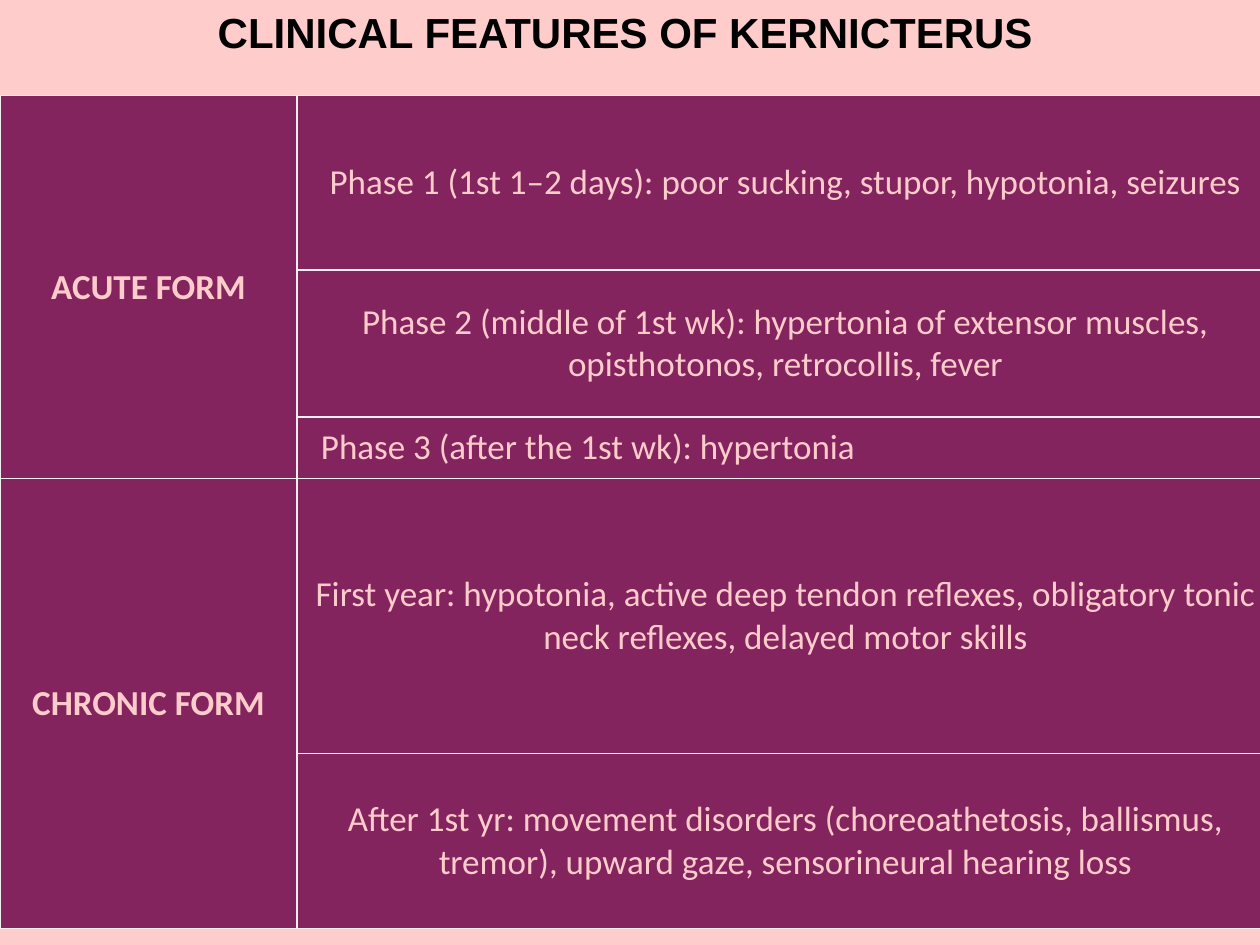
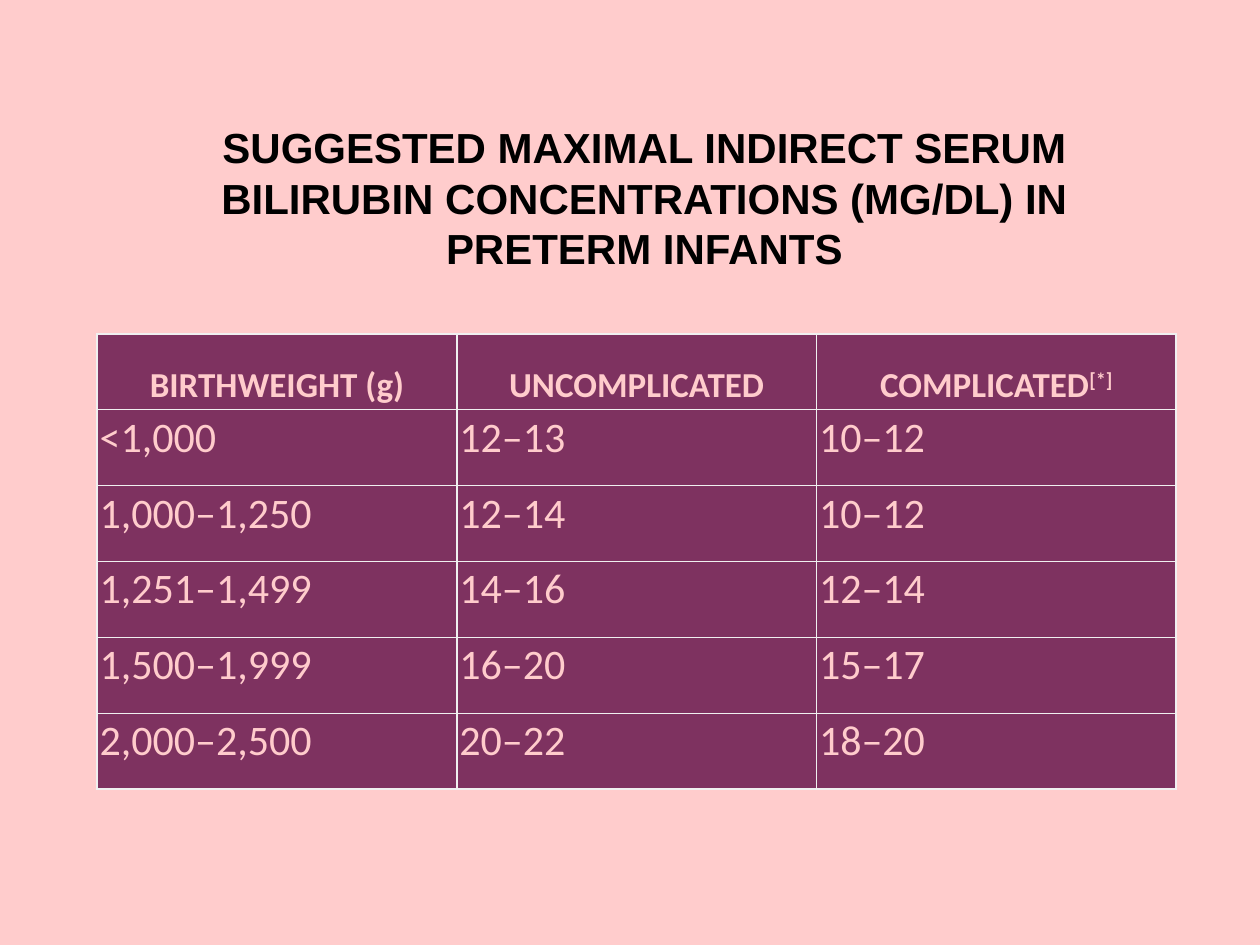
from dataclasses import dataclass

from lxml.etree import SubElement
from pptx import Presentation
from pptx.dml.color import RGBColor
from pptx.enum.text import MSO_ANCHOR as Anchor, MSO_AUTO_SIZE as AutoSize, PP_ALIGN as Align
from pptx.oxml import parse_xml
from pptx.oxml.ns import nsdecls, qn
from pptx.util import Cm, Pt

COLORS = {
    "background": "FFCCCC",
    "title": "000000",
    "cell_text": "FFCCCC",
    "border": "F0F0F0",
    "features": "84245E",
    "limits": "7E3260",
}
TITLE_FONT = {"name": "Arial", "size": Pt(24), "bold": True}
LABEL_FONT = {"name": "Calibri", "size": Pt(20), "bold": True}
PHASE_FONT = {"name": "Calibri", "size": Pt(20), "bold": False}
VALUE_FONT = {"name": "Calibri", "size": Pt(24), "bold": False}
SIDES = ("left", "right", "top", "bottom")


@dataclass(frozen=True)
class Box:
    """Position and size in centimetres."""
    left: float
    top: float
    width: float
    height: float

    def lengths(self) -> tuple:
        return Cm(self.left), Cm(self.top), Cm(self.width), Cm(self.height)


@dataclass(frozen=True)
class CellText:
    text: str
    font: dict
    align: Align = Align.CENTER
    anchor: Anchor = Anchor.MIDDLE
    margins: tuple = (0.03, 0.03, 0.03, 0.03)  # left, right, top, bottom
    superscript: str = ""


def color(name: str) -> RGBColor:
    return RGBColor.from_string(COLORS[name])


def apply_font(font, values: dict, color_name: str) -> None:
    for name, value in values.items():
        setattr(font, name, value)
    font.color.rgb = color(color_name)


def add_titled_slide(presentation, title: str, box: Box, wrap: bool):
    slide = presentation.slides.add_slide(presentation.slide_layouts[5])
    shape = slide.shapes.title
    shape.left, shape.top, shape.width, shape.height = box.lengths()
    frame = shape.text_frame
    frame.text = title
    frame.word_wrap = wrap
    frame.auto_size = AutoSize.NONE
    frame.vertical_anchor = Anchor.MIDDLE
    paragraph = frame.paragraphs[0]
    paragraph.alignment = Align.CENTER
    apply_font(paragraph.runs[0].font, TITLE_FONT, "title")
    return slide


def add_borders(cell) -> None:
    properties = cell._tc.get_or_add_tcPr()
    for index, side in enumerate("LRTB"):
        line = parse_xml(f'<a:ln{side} {nsdecls("a")} w="{Pt(1)}"/>')
        fill = SubElement(line, qn("a:solidFill"))
        SubElement(fill, qn("a:srgbClr"), val=COLORS["border"])
        properties.insert(index, line)


def add_grid(slide, left: float, top: float, columns: list, rows: list, fill: str):
    """Add a table whose cells all share one fill and border."""
    box = Box(left, top, sum(columns), sum(rows))
    table = slide.shapes.add_table(len(rows), len(columns), *box.lengths()).table
    table.first_row = table.horz_banding = False
    for column, width in zip(table.columns, columns):
        column.width = Cm(width)
    for row, height in zip(table.rows, rows):
        row.height = Cm(height)
    for cell in table.iter_cells():
        cell.fill.solid()
        cell.fill.fore_color.rgb = color(fill)
        add_borders(cell)
    return table


def write_cell(cell, content: CellText) -> None:
    for side, margin in zip(SIDES, content.margins):
        setattr(cell, f"margin_{side}", Cm(margin))
    cell.vertical_anchor = content.anchor
    paragraph = cell.text_frame.paragraphs[0]
    paragraph.alignment = content.align
    for text in filter(None, (content.text, content.superscript)):
        run = paragraph.add_run()
        run.text = text
        apply_font(run.font, content.font, "cell_text")
    if content.superscript:
        run._r.get_or_add_rPr().set("baseline", "30000")


def add_features_slide(presentation) -> None:
    slide = add_titled_slide(presentation, "CLINICAL FEATURES OF KERNICTERUS",
                             Box(4.06, 0, 17.09, 1.27), wrap=False)
    table = add_grid(slide, 0, 1.93, [5.99, 19.69],
                     [3.51, 2.97, 1.24, 5.54, 3.53], "features")

    # Forms, each spanning its own phases
    for label, first, last in (("ACUTE FORM", 0, 2), ("CHRONIC FORM", 3, 4)):
        table.cell(first, 0).merge(table.cell(last, 0))
        write_cell(table.cell(first, 0), CellText(label, LABEL_FONT))

    # Phases
    wide = (0.15, 0.15, 0.08, 0.08)
    phases = [
        CellText("Phase 1 (1st 1–2 days): poor sucking, stupor, hypotonia, seizures",
                 PHASE_FONT, margins=wide),
        CellText("Phase 2 (middle of 1st wk): hypertonia of extensor muscles, "
                 "opisthotonos, retrocollis, fever", PHASE_FONT),
        CellText("Phase 3 (after the 1st wk): hypertonia", PHASE_FONT, Align.LEFT,
                 margins=(0.48, 0.03, 0.03, 0.03)),
        CellText("First year: hypotonia, active deep tendon reflexes, obligatory tonic "
                 "neck reflexes, delayed motor skills", PHASE_FONT, margins=wide),
        CellText("After 1st yr: movement disorders (choreoathetosis, ballismus, tremor), "
                 "upward gaze, sensorineural hearing loss", PHASE_FONT),
    ]
    for row, phase in enumerate(phases):
        write_cell(table.cell(row, 1), phase)


def add_limits_slide(presentation) -> None:
    slide = add_titled_slide(
        presentation,
        "SUGGESTED MAXIMAL INDIRECT SERUM BILIRUBIN CONCENTRATIONS (MG/DL) "
        "IN PRETERM INFANTS",
        Box(3.3, 2.31, 19.38, 3.33), wrap=True)
    limits = [
        ("<1,000", "12–13", "10–12"),
        ("1,000–1,250", "12–14", "10–12"),
        ("1,251–1,499", "14–16", "12–14"),
        ("1,500–1,999", "16–20", "15–17"),
        ("2,000–2,500", "20–22", "18–20"),
    ]
    table = add_grid(slide, 1.96, 6.73, [7.25] * 3, [1.53] * (len(limits) + 1), "limits")
    margins = (0.05,) * 4

    # Header row
    headers = (("BIRTHWEIGHT (g)", ""), ("UNCOMPLICATED", ""), ("COMPLICATED", "[*]"))
    for column, (label, mark) in enumerate(headers):
        write_cell(table.cell(0, column),
                   CellText(label, LABEL_FONT, anchor=Anchor.BOTTOM,
                            margins=margins, superscript=mark))

    # Limits by birthweight
    for row, values in enumerate(limits, start=1):
        for column, value in enumerate(values):
            write_cell(table.cell(row, column),
                       CellText(value, VALUE_FONT, Align.LEFT, Anchor.TOP, margins))


def main() -> None:
    presentation = Presentation()
    presentation.slide_width, presentation.slide_height = Cm(25.4), Cm(19.05)
    background = presentation.slide_master.background.fill
    background.solid()
    background.fore_color.rgb = color("background")
    add_features_slide(presentation)
    add_limits_slide(presentation)
    presentation.save("out.pptx")


if __name__ == "__main__":
    main()
